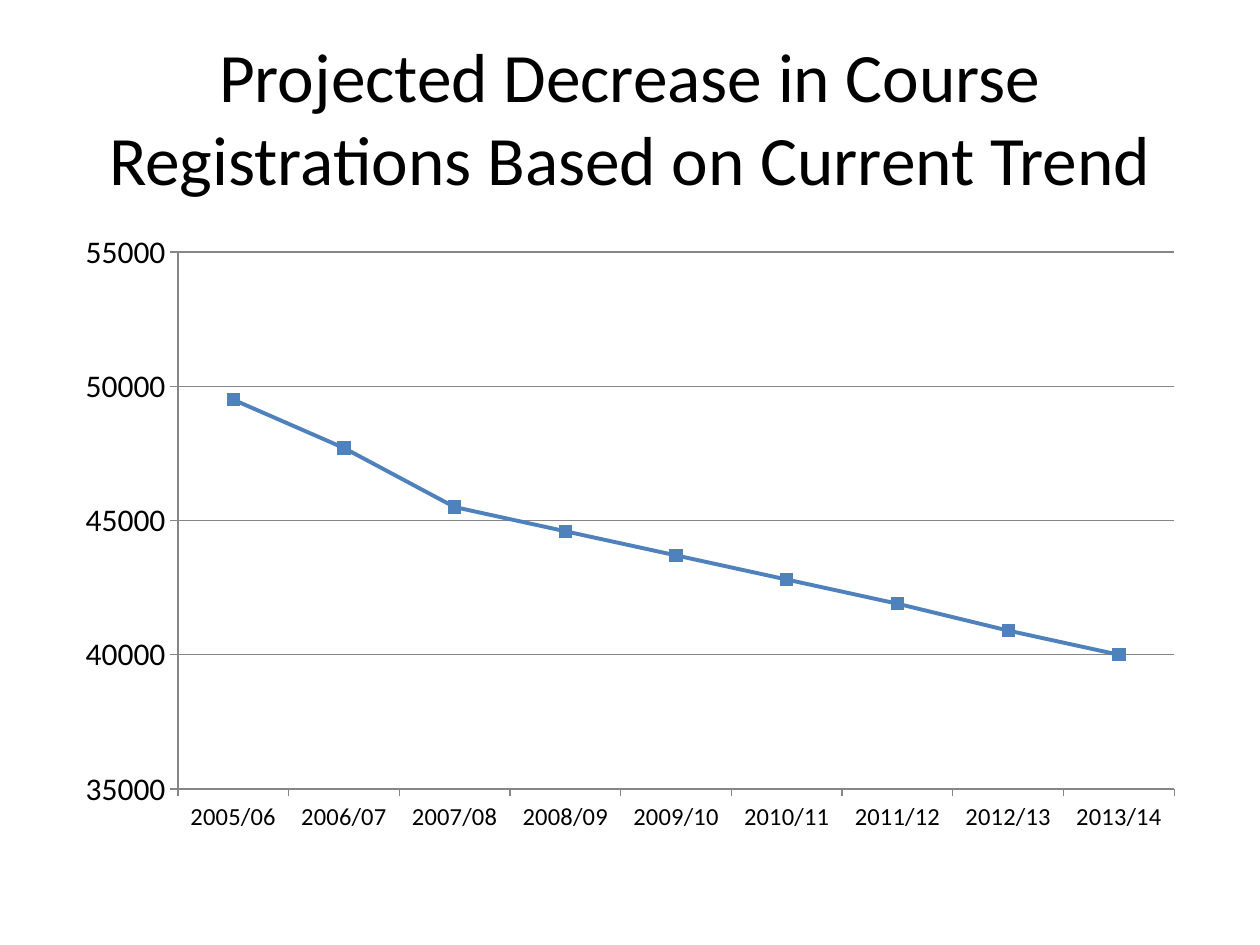
from pptx import Presentation
from pptx import util as u
from pptx.chart import data as chart_data
from pptx.dml.color import RGBColor
from pptx.enum import chart as charts, text

BLACK = RGBColor(0x00, 0x00, 0x00)
GRAY = RGBColor(0x86, 0x86, 0x86)
BLUE = RGBColor(0x4F, 0x81, 0xBD)

REGISTRATIONS = [49500, 47700, 45500, 44600, 43700, 42800, 41900, 40900, 40000]
YEARS = [f"{year}/{(year + 1) % 100:02d}" for year in range(2005, 2014)]


class SlideBuilder:
    """Holds the shared style and the current slide."""

    font_name = "Calibri"

    def __init__(self, deck):
        self.page = deck.slides.add_slide(deck.slide_layouts[5])

    def style_font(self, font, size):
        font.name = self.font_name
        font.size = u.Pt(size)
        font.color.rgb = BLACK

    def title(self, wording, left, top, width, height, size):
        box = self.page.shapes.title
        box.left, box.top = u.Inches(left), u.Inches(top)
        box.width, box.height = u.Inches(width), u.Inches(height)
        frame = box.text_frame
        frame.text = wording
        frame.word_wrap = True
        frame.auto_size = text.MSO_AUTO_SIZE.NONE
        frame.vertical_anchor = text.MSO_ANCHOR.MIDDLE
        para = frame.paragraphs[0]
        para.alignment = text.PP_ALIGN.CENTER
        self.style_font(para.runs[0].font, size)

    def axis(self, axis, size):
        axis.major_tick_mark = charts.XL_TICK_MARK.OUTSIDE
        axis.minor_tick_mark = charts.XL_TICK_MARK.NONE
        axis.format.line.color.rgb = GRAY
        self.style_font(axis.tick_labels.font, size)

    def line_chart(self, categories, values, left, top, width, height):
        data = chart_data.CategoryChartData()
        data.categories = categories
        data.add_series("Series 1", values)
        chart = self.page.shapes.add_chart(
            charts.XL_CHART_TYPE.LINE_MARKERS,
            u.Inches(left), u.Inches(top), u.Inches(width), u.Inches(height), data,
        ).chart
        chart.has_title = False
        chart.has_legend = False
        self.style_font(chart.font, 18)
        chart.plots[0].vary_by_categories = False

        # Axes and gridlines
        self.axis(chart.category_axis, 14)
        value_axis = chart.value_axis
        self.axis(value_axis, 18)
        value_axis.minimum_scale = 35000
        value_axis.maximum_scale = 55000
        value_axis.major_unit = 5000
        value_axis.has_major_gridlines = True
        value_axis.major_gridlines.format.line.color.rgb = GRAY

        # Line and square markers
        series = chart.plots[0].series[0]
        series.smooth = False
        series.format.line.color.rgb = BLUE
        series.format.line.width = u.Pt(2.25)
        marker = series.marker
        marker.style = charts.XL_MARKER_STYLE.SQUARE
        marker.size = 7
        marker.format.fill.solid()
        marker.format.fill.fore_color.rgb = BLUE
        marker.format.line.color.rgb = BLUE


def main():
    deck = Presentation()
    deck.slide_width, deck.slide_height = u.Inches(10), u.Inches(7.5)
    builder = SlideBuilder(deck)
    builder.title("Projected Decrease in Course Registrations Based on Current Trend",
                  0.5, 0.3, 9, 1.25, size=39.6)
    builder.line_chart(YEARS, REGISTRATIONS, 0.5, 1.75, 9, 4.95)
    deck.save("out.pptx")


if __name__ == "__main__":
    main()
